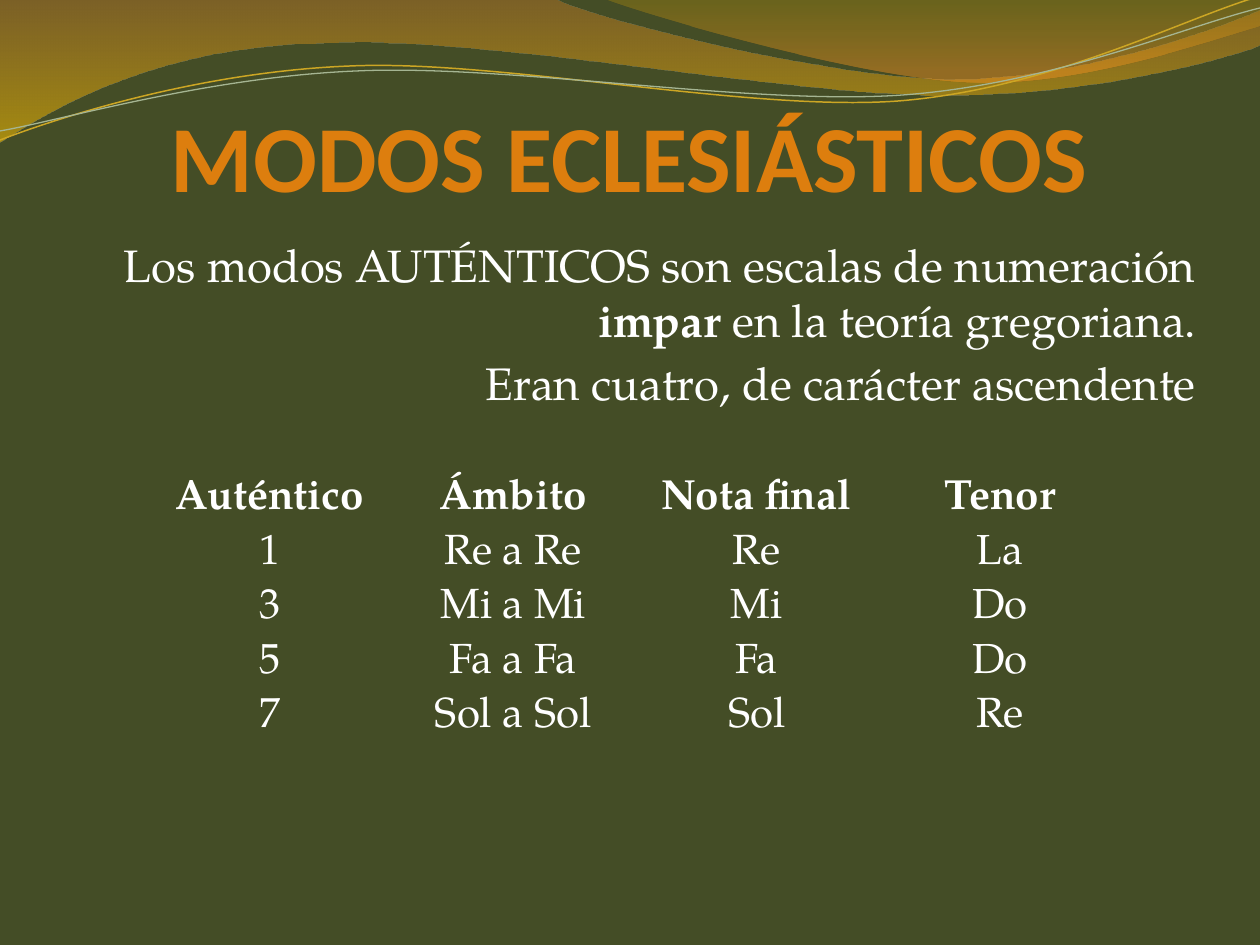
import dataclasses
import pptx
import pptx.dml.color
import pptx.enum.text
import pptx.oxml
import pptx.oxml.ns
import pptx.util

UNIT = 914400 / 126
ALIGN = pptx.enum.text.PP_ALIGN
ANCHOR = pptx.enum.text.MSO_ANCHOR


@dataclasses.dataclass(frozen=True)
class Theme:
    """Colours, fonts and type sizes of the slide."""
    back: str = "444D26"
    title: str = "DD7E0E"
    text: str = "FFFFFF"
    gold: str = "CCA624"
    sage: str = "A5B592"
    wide: tuple = ((0, "C07A28", 45), (100, "F7BF00", 55))
    small: tuple = ((0, "C09709", 30), (80, "F59320", 45))
    head: str = "Calibri"
    body: str = "TeX Gyre Pagella"
    big: int = 54
    mid: int = 26
    cell: int = 24


THEME = Theme()

WIDE = [(0, 0), (554, -1), (600, 21, 837, 79, 955, 79),
        (1075, 79, 1207, 33, 1260, 11), (1261, 45),
        (1239, 55, 1096, 96, 940, 95), (784, 95, 481, 35, 324, 43),
        (163, 45, 58, 105, -1, 142)]
SMALL = [(604, -1), (641, 14, 859, 78, 969, 82),
         (1079, 87, 1211, 40, 1260, 26), (1260, 0)]
GOLD = [(0, 140), (60, 117, 199, 72, 349, 66),
        (498, 59, 747, 112, 898, 101), (1050, 89, 1182, 19, 1257, -3)]
SAGE = [(0, 131), (59, 121, 207, 77, 357, 71),
        (508, 64, 752, 106, 903, 95), (1053, 84, 1186, 26, 1260, 8)]

MODES = [("Auténtico", "Ámbito", "Nota final", "Tenor"),
         ("1", "Re a Re", "Re", "La"),
         ("3", "Mi a Mi", "Mi", "Do"),
         ("5", "Fa a Fa", "Fa", "Do"),
         ("7", "Sol a Sol", "Sol", "Re")]


def px(num):
    """Turn pixels into EMU."""
    return pptx.util.Emu(round(num * UNIT))


def tint(code):
    """Turn a hex code into a colour."""
    return pptx.dml.color.RGBColor.from_string(code)


def place(shape, left, top, width, height):
    """Set the frame of a shape in pixels."""
    shape.left, shape.top = px(left), px(top)
    shape.width, shape.height = px(width), px(height)


def inset(item, left, top, right, bottom):
    """Set the inner margins of a text frame or cell in pixels."""
    item.margin_left, item.margin_top = px(left), px(top)
    item.margin_right, item.margin_bottom = px(right), px(bottom)


def style(run, face, size, code, bold=False):
    """Format one run."""
    font = run.font
    font.name, font.size, font.bold = face, pptx.util.Pt(size), bold
    font.color.rgb = tint(code)


def bend(shape, steps):
    """Join each three segments of a six-number step into a cubic curve."""
    name = pptx.oxml.ns.qn
    lines = iter(list(shape._element.iter(name("a:lnTo"))))
    for step in steps:
        first = next(lines)
        if len(step) == 6:
            first.tag = name("a:cubicBezTo")
            for _ in range(2):
                line = next(lines)
                first.append(line[0])
                line.getparent().remove(line)


def draw(slide, steps, close):
    """Add a freeform of lines and cubic curves without a shadow."""
    pen = slide.shapes.build_freeform(*steps[0], scale=UNIT)
    spots = [step[i:i + 2] for step in steps[1:] for i in range(0, len(step), 2)]
    pen.add_line_segments(spots, close=close)
    shape = pen.convert_to_shape()
    bend(shape, steps[1:])
    shape.shadow.inherit = False
    return shape


def add_wave(slide, steps, stops):
    """Add a filled wave with a clear vertical gradient."""
    shape = draw(slide, steps, True)
    shape.line.fill.background()
    marks = "".join(
        f'<a:gs pos="{pos * 1000}"><a:srgbClr val="{code}">'
        f'<a:alpha val="{alpha * 1000}"/></a:srgbClr></a:gs>'
        for pos, code, alpha in stops)
    fill = pptx.oxml.parse_xml(
        f'<a:gradFill {pptx.oxml.ns.nsdecls("a")}><a:gsLst>{marks}</a:gsLst>'
        '<a:lin ang="5400000" scaled="0"/></a:gradFill>')
    shape._element.spPr.find(pptx.oxml.ns.qn("a:custGeom")).addnext(fill)


def add_curve(slide, steps, code, width):
    """Add an open curved line."""
    shape = draw(slide, steps, False)
    shape.fill.background()
    shape.line.color.rgb = tint(code)
    shape.line.width = pptx.util.Pt(width)


def set_title(slide, text):
    """Fill the title and bring it above the waves."""
    title = slide.shapes.title
    place(title, 89, 73, 1082, 252)
    frame = title.text_frame
    frame.text = text
    frame.vertical_anchor = ANCHOR.BOTTOM
    inset(frame, 0, 0, 2, 114)
    line = frame.paragraphs[0]
    line.alignment = ALIGN.CENTER
    style(line.runs[0], THEME.head, THEME.big, THEME.title, True)
    slide.shapes._spTree.append(title._element)


def add_text(slide, lines):
    """Add right-aligned lines made of plain and bold parts."""
    box = slide.shapes.add_textbox(0, 0, 0, 0)
    place(box, 20, 231, 1187, 242)
    frame = box.text_frame
    frame.word_wrap = True
    inset(frame, 0, 6, 10, 6)
    for i, parts in enumerate(lines):
        line = frame.add_paragraph() if i else frame.paragraphs[0]
        line.alignment = ALIGN.RIGHT
        line.space_before = pptx.util.Pt(THEME.mid * 0.2)
        for text, bold in parts:
            run = line.add_run()
            run.text = text
            style(run, THEME.body, THEME.mid, THEME.text, bold)


def add_grid(slide, rows):
    """Add a plain table with a bold first row."""
    shape = slide.shapes.add_table(len(rows), len(rows[0]), px(148), px(473),
                                   px(974), px(273))
    grid = shape.table
    grid.first_row = grid.horz_banding = False
    mark = grid._tbl.tblPr.find(pptx.oxml.ns.qn("a:tableStyleId"))
    mark.text = "{2D5ABB26-0587-4C30-8999-92F81FD0307C}"
    for r, row in enumerate(rows):
        for c, text in enumerate(row):
            cell = grid.cell(r, c)
            cell.fill.background()
            cell.vertical_anchor = ANCHOR.MIDDLE
            inset(cell, 0, 0, 0, 0)
            line = cell.text_frame.paragraphs[0]
            line.text = text
            line.alignment = ALIGN.CENTER
            style(line.runs[0], THEME.body, THEME.cell, THEME.text, r == 0)


def main():
    """Build and save the slide."""
    deck = pptx.Presentation()
    deck.slide_width, deck.slide_height = px(1260), px(945)
    slide = deck.slides.add_slide(deck.slide_layouts[5])
    fill = slide.background.fill
    fill.solid()
    fill.fore_color.rgb = tint(THEME.back)
    add_wave(slide, WIDE, THEME.wide)
    add_wave(slide, SMALL, THEME.small)
    add_curve(slide, GOLD, THEME.gold, 0.85)
    add_curve(slide, SAGE, THEME.sage, 0.75)
    set_title(slide, "MODOS ECLESIÁSTICOS")
    add_text(slide, [
        [("Los modos AUTÉNTICOS son escalas de numeración ", False),
         ("impar", True), (" en la teoría gregoriana.", False)],
        [("Eran cuatro, de carácter ascendente", False)]])
    add_grid(slide, MODES)
    deck.save("out.pptx")


if __name__ == "__main__":
    main()
